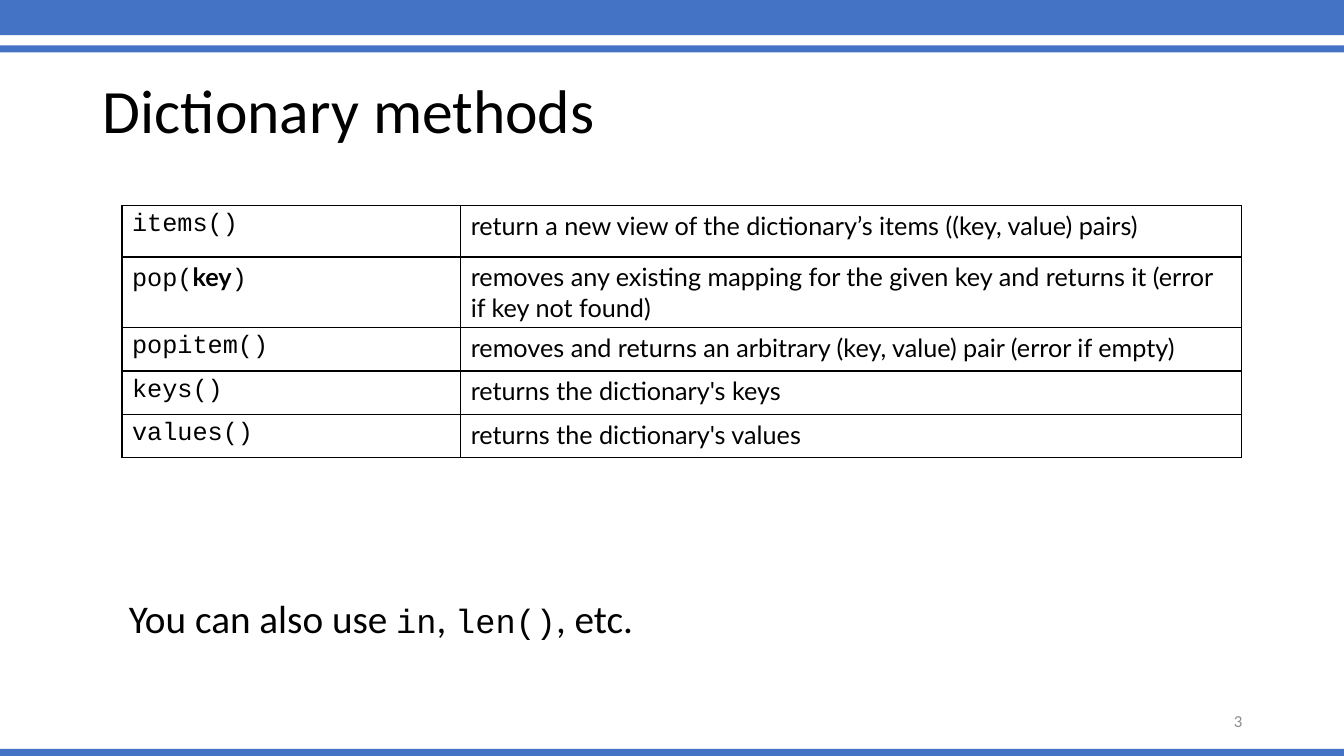
from lxml.etree import SubElement
from pptx import Presentation
from pptx.dml.color import RGBColor
from pptx.enum.shapes import MSO_SHAPE as Preset
from pptx.enum.text import MSO_ANCHOR as Anchor, MSO_AUTO_SIZE as AutoSize, PP_ALIGN as Align
from pptx.oxml.ns import qn
from pptx.util import Inches, Pt

# Content: each run is (text, font, size, bold)
COLORS = {"bar": "4472C4", "text": "000000", "border": "000000", "number": "8C8C8C"}
BODY, CODE, CELL = "Calibri", "Courier New", "Lato"
TITLE = [("Dictionary methods", BODY, 44, False)]
METHODS = [
    ([("items()", CODE)], "return a new view of the dictionary’s items ((key, value) pairs)"),
    ([("pop(", CODE), ("key", CELL), (")", CODE)],
     "removes any existing mapping for the given key and returns it (error if key not found)"),
    ([("popitem()", CODE)], "removes and returns an arbitrary (key, value) pair (error if empty)"),
    ([("keys()", CODE)], "returns the dictionary's keys"),
    ([("values()", CODE)], "returns the dictionary's values"),
]
REMARK = [
    ("You can also use ", BODY, 28, False),
    ("in", CODE, 24, False),
    (", ", BODY, 28, False),
    ("len()", CODE, 24, False),
    (", etc.", BODY, 28, False),
]
PAGE_NUMBER = [("3", BODY, 12, False)]

# Layout in inches
WIDTH, HEIGHT = 13.33, 7.5
THIN = 0.07
BARS = [(-0.03, 0.38), (0.45, THIN), (HEIGHT - THIN, THIN)]  # top, height
TITLE_BOX = (0.92, 0.4, 11.5, 1.45)
REMARK_BOX = (1.18, 5.43, 11.24, 1.45)
NUMBER_BOX = (9.42, 6.95, 3, 0.4)
TABLE_AT = (1.21, 2.04)
COLUMNS = [3.36, 7.74]
ROWS = [0.51, 0.4] + [0.43] * 3


def color(key):
    return RGBColor.from_string(COLORS[key])


def add_runs(paragraph, runs, color_key="text"):
    for text, font, size, bold in runs:
        run = paragraph.add_run()
        run.text = text
        run.font.name, run.font.size, run.font.bold = font, Pt(size), bold
        run.font.color.rgb = color(color_key)


def fill_box(box, place, runs, color_key="text", align=Align.LEFT, spacing=0.9):
    box.left, box.top, box.width, box.height = map(Inches, place)
    frame = box.text_frame
    frame.word_wrap = True
    frame.auto_size = AutoSize.NONE
    frame.vertical_anchor = Anchor.MIDDLE
    paragraph = frame.paragraphs[0]
    paragraph.alignment, paragraph.line_spacing = align, spacing
    add_runs(paragraph, runs, color_key)


def fill_cell(cell, runs):
    cell.margin_left = cell.margin_right = Inches(0.1)
    cell.margin_top = cell.margin_bottom = Inches(0.05)
    add_runs(cell.text_frame.paragraphs[0], runs)
    properties = cell._tc.get_or_add_tcPr()
    for side in ("a:lnL", "a:lnR", "a:lnT", "a:lnB"):
        line = SubElement(properties, qn(side), w=str(Pt(1)))
        solid = SubElement(line, qn("a:solidFill"))
        SubElement(solid, qn("a:srgbClr"), val=COLORS["border"])
    cell.fill.background()


def main():
    deck = Presentation()
    deck.slide_width, deck.slide_height = Inches(WIDTH), Inches(HEIGHT)
    slide = deck.slides.add_slide(deck.slide_layouts[5])
    shapes = slide.shapes

    # Bars at the top and bottom edges
    for top, height in BARS:
        bar = shapes.add_shape(Preset.RECTANGLE, 0, Inches(top), Inches(WIDTH), Inches(height))
        bar.shadow.inherit = False
        bar.fill.solid()
        bar.fill.fore_color.rgb = color("bar")
        bar.line.fill.background()

    # Title
    fill_box(shapes.title, TITLE_BOX, TITLE)

    # Table of methods
    left, top = TABLE_AT
    size = (left, top, sum(COLUMNS), sum(ROWS))
    table = shapes.add_table(len(ROWS), len(COLUMNS), *map(Inches, size)).table
    table.first_row = table.horz_banding = False
    for column, width in zip(table.columns, COLUMNS):
        column.width = Inches(width)
    for index, (height, (call, meaning)) in enumerate(zip(ROWS, METHODS)):
        table.rows[index].height = Inches(height)
        fill_cell(table.cell(index, 0), [(text, font, 18, font == CELL) for text, font in call])
        fill_cell(table.cell(index, 1), [(meaning, CELL, 18, False)])

    # Remark and page number
    fill_box(shapes.add_textbox(0, 0, 0, 0), REMARK_BOX, REMARK)
    fill_box(shapes.add_textbox(0, 0, 0, 0), NUMBER_BOX, PAGE_NUMBER, "number", Align.RIGHT, 1.0)

    deck.save("out.pptx")


if __name__ == "__main__":
    main()
